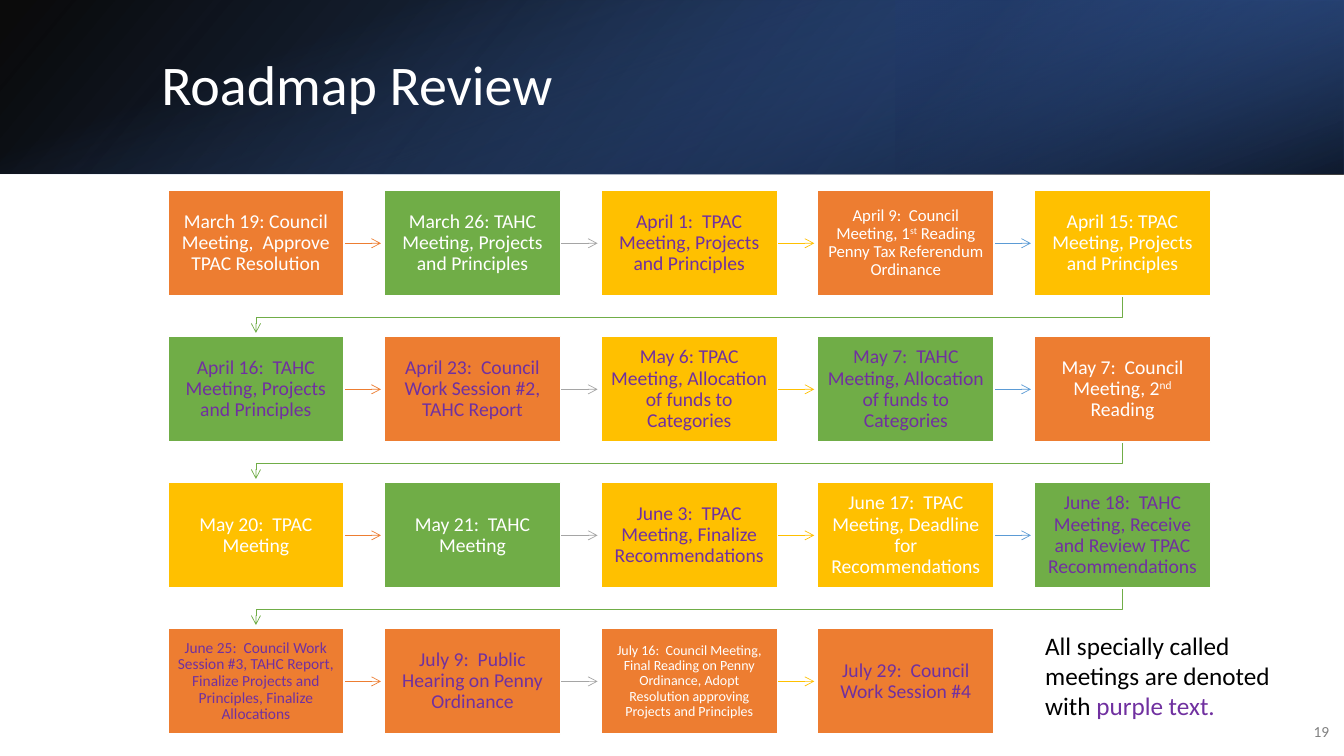
from dataclasses import dataclass

from lxml import etree
from pptx import Presentation
from pptx.dml.color import RGBColor
from pptx.enum.shapes import MSO_CONNECTOR as Connector, MSO_SHAPE as Preset
from pptx.enum.text import MSO_ANCHOR as Anchor, MSO_AUTO_SIZE as AutoSize, PP_ALIGN as Align
from pptx.oxml import parse_xml
from pptx.oxml.ns import nsdecls, qn
from pptx.util import Cm, Pt


@dataclass(frozen=True)
class Theme:
    font: str = "Calibri"
    white: str = "FFFFFF"
    black: str = "000000"
    grey: str = "808080"
    purple: str = "7030A0"
    orange: str = "ED7D31"
    green: str = "70AD47"
    yellow: str = "FFC000"
    silver: str = "A5A5A5"
    blue: str = "5B9BD5"
    title_size: int = 40
    note_size: int = 18
    box_size: int = 14
    number_size: int = 11


THEME = Theme()
COUNCIL, TAHC, TPAC = THEME.orange, THEME.green, THEME.yellow
ARROW_COLORS = (THEME.orange, THEME.silver, THEME.yellow, THEME.blue)

# Grid of meeting boxes, in centimetres
LEFT, TOP = 4.23, 4.8
BOX_WIDTH, BOX_HEIGHT = 4.44, 2.66
COLUMN_STEP, ROW_STEP = 5.46, 3.68
COLUMNS = 5
ARROW_LENGTH = 0.93
TURN_DEPTH = 0.53


@dataclass(frozen=True)
class Meeting:
    text: str  # carets enclose superscripts
    fill: str
    special: bool = False
    size: int = THEME.box_size


@dataclass(frozen=True)
class Banner:
    """One gradient layer; each stop is (position %, colour, opacity %)."""
    left: float
    top: float
    width: float
    height: float
    angle: int
    stops: tuple[tuple[int, str, int], ...]
    rotation: int = 0
    flipped: bool = False


BANNERS = (
    Banner(0, 0, 33.87, 4.38, 140, ((0, "000000", 96), (100, "2F5597", 100)), flipped=True),
    Banner(22.58, 0, 11.29, 4.38, 320, ((19, "203864", 68), (100, "4472C4", 79)),
           rotation=180, flipped=True),
    Banner(14.74, -14.74, 4.38, 33.87, 340, ((23, "4472C4", 0), (99, "000000", 74)),
           rotation=90),
)

MEETINGS = (
    Meeting("March 19: Council Meeting,  Approve TPAC Resolution", COUNCIL),
    Meeting("March 26: TAHC Meeting, Projects and Principles", TAHC),
    Meeting("April 1:  TPAC Meeting, Projects and Principles", TPAC, special=True),
    Meeting("April 9:  Council Meeting, 1^st^ Reading Penny Tax Referendum Ordinance",
            COUNCIL, size=12),
    Meeting("April 15: TPAC Meeting, Projects and Principles", TPAC),
    Meeting("April 16:  TAHC Meeting, Projects and Principles", TAHC, special=True),
    Meeting("April 23:  Council Work Session #2, TAHC Report", COUNCIL, special=True),
    Meeting("May 6: TPAC Meeting, Allocation of funds to Categories", TPAC, special=True),
    Meeting("May 7:  TAHC Meeting, Allocation of funds to Categories", TAHC, special=True),
    Meeting("May 7:  Council Meeting, 2^nd^ Reading", COUNCIL),
    Meeting("May 20:  TPAC Meeting", TPAC),
    Meeting("May 21:  TAHC Meeting", TAHC),
    Meeting("June 3:  TPAC Meeting, Finalize Recommendations", TPAC, special=True),
    Meeting("June 17:  TPAC Meeting, Deadline for Recommendations", TPAC),
    Meeting("June 18:  TAHC Meeting, Receive and Review TPAC Recommendations",
            TAHC, special=True),
    Meeting("June 25:  Council Work Session #3, TAHC Report, Finalize Projects and "
            "Principles, Finalize Allocations", COUNCIL, special=True, size=11),
    Meeting("July 9:  Public Hearing on Penny Ordinance", COUNCIL, special=True),
    Meeting("July 16:  Council Meeting, Final Reading on Penny Ordinance, Adopt "
            "Resolution approving Projects and Principles", COUNCIL, size=10),
    Meeting("July 29:  Council Work Session #4", COUNCIL, special=True),
)


def write(paragraph, text: str, *, size: int, color: str, align=Align.LEFT,
          spacing: float = 1.0) -> None:
    """Append text to a paragraph; parts between carets become superscript."""
    paragraph.alignment = align
    paragraph.line_spacing = spacing
    for index, part in enumerate(text.split("^")):
        run = paragraph.add_run()
        run.text = part
        run.font.name = THEME.font
        run.font.size = Pt(size)
        run.font.color.rgb = RGBColor.from_string(color)
        if index % 2:
            run.font._element.set("baseline", "30000")


def add_text_box(slide, left: float, top: float, width: float, height: float, anchor):
    frame = slide.shapes.add_textbox(Cm(left), Cm(top), Cm(width), Cm(height)).text_frame
    frame.word_wrap = True
    frame.vertical_anchor = anchor
    return frame.paragraphs[0]


def add_banner(slide, banner: Banner) -> None:
    shape = slide.shapes.add_shape(Preset.RECTANGLE, Cm(banner.left), Cm(banner.top),
                                   Cm(banner.width), Cm(banner.height))
    shape.shadow.inherit = False
    shape.line.fill.background()
    shape.rotation = banner.rotation
    properties = shape._element.spPr
    if banner.flipped:
        properties.find(qn("a:xfrm")).set("flipH", "1")
    stops = "".join(
        f'<a:gs pos="{position * 1000}"><a:srgbClr val="{color}">'
        f'<a:alpha val="{opacity * 1000}"/></a:srgbClr></a:gs>'
        for position, color, opacity in banner.stops)
    gradient = parse_xml(
        f'<a:gradFill {nsdecls("a")} rotWithShape="1"><a:gsLst>{stops}</a:gsLst>'
        f'<a:lin ang="{banner.angle * 60000}" scaled="0"/></a:gradFill>')
    properties.find(qn("a:prstGeom")).addnext(gradient)


def style_arrow(shape, color: str) -> None:
    shape.line.color.rgb = RGBColor.from_string(color)
    shape.line.width = Pt(0.5)
    etree.SubElement(shape.line._get_or_add_ln(), qn("a:tailEnd"), type="arrow")


def add_arrow(slide, left: float, top: float, color: str) -> None:
    """Arrow from a box at (left, top) to its right-hand neighbour."""
    start, middle = left + BOX_WIDTH, top + BOX_HEIGHT / 2
    arrow = slide.shapes.add_connector(Connector.STRAIGHT, Cm(start), Cm(middle),
                                       Cm(start + ARROW_LENGTH), Cm(middle))
    style_arrow(arrow, color)
    etree.SubElement(arrow._element.spPr, qn("a:effectLst"))


def add_row_turn(slide, left: float, top: float) -> None:
    """Bent arrow from the last box of a row to the first box of the next."""
    start, end = left + BOX_WIDTH / 2, LEFT + BOX_WIDTH / 2
    bottom = top + BOX_HEIGHT
    points = ((start, bottom + TURN_DEPTH), (end, bottom + TURN_DEPTH),
              (end, bottom + ARROW_LENGTH))
    builder = slide.shapes.build_freeform(Cm(start), Cm(bottom))
    builder.add_line_segments([(Cm(x), Cm(y)) for x, y in points], close=False)
    turn = builder.convert_to_shape()
    turn.fill.background()
    style_arrow(turn, THEME.green)
    turn.shadow.inherit = False


def add_meeting(slide, meeting: Meeting, left: float, top: float) -> None:
    box = slide.shapes.add_shape(Preset.RECTANGLE, Cm(left), Cm(top),
                                 Cm(BOX_WIDTH), Cm(BOX_HEIGHT))
    box.shadow.inherit = False
    box.fill.solid()
    box.fill.fore_color.rgb = RGBColor.from_string(meeting.fill)
    box.line.color.rgb = RGBColor.from_string(THEME.white)
    box.line.width = Pt(1)
    frame = box.text_frame
    frame.word_wrap = True
    frame.vertical_anchor = Anchor.MIDDLE
    frame.margin_left = frame.margin_right = Cm(0.23)
    frame.margin_top = frame.margin_bottom = Cm(0.23)
    write(frame.paragraphs[0], meeting.text, size=meeting.size, align=Align.CENTER,
          color=THEME.purple if meeting.special else THEME.white, spacing=0.9)


def main() -> None:
    presentation = Presentation()
    presentation.slide_width, presentation.slide_height = Cm(33.87), Cm(19.05)
    slide = presentation.slides.add_slide(presentation.slide_layouts[5])

    # Banner and title, with the title in front
    for banner in BANNERS:
        add_banner(slide, banner)
    title = slide.shapes.title
    title.left, title.top, title.width, title.height = Cm(3.81), Cm(0.97), Cm(27.89), Cm(2.44)
    title.text_frame.auto_size = AutoSize.NONE
    title.text_frame.vertical_anchor = Anchor.MIDDLE
    write(title.text_frame.paragraphs[0], "Roadmap Review", size=THEME.title_size,
          color=THEME.white, spacing=0.9)
    title._element.getparent().append(title._element)

    # Slide number
    number = add_text_box(slide, 32.51, 17.93, 1.24, 1.02, Anchor.MIDDLE)
    number.space_after = Pt(6)
    write(number, "19", size=THEME.number_size, color=THEME.grey, align=Align.RIGHT)

    # Meetings, each with the arrow to the next one
    for index, meeting in enumerate(MEETINGS):
        row, column = divmod(index, COLUMNS)
        left, top = LEFT + column * COLUMN_STEP, TOP + row * ROW_STEP
        if column == COLUMNS - 1:
            add_row_turn(slide, left, top)
        elif index < len(MEETINGS) - 1:
            add_arrow(slide, left, top, ARROW_COLORS[column])
        add_meeting(slide, meeting, left, top)

    # Key to the purple text
    note = add_text_box(slide, 26.09, 15.75, 6.32, 2.57, Anchor.TOP)
    write(note, "All specially called meetings are denoted with ",
          size=THEME.note_size, color=THEME.black)
    write(note, "purple text.", size=THEME.note_size, color=THEME.purple)

    presentation.save("out.pptx")


if __name__ == "__main__":
    main()
